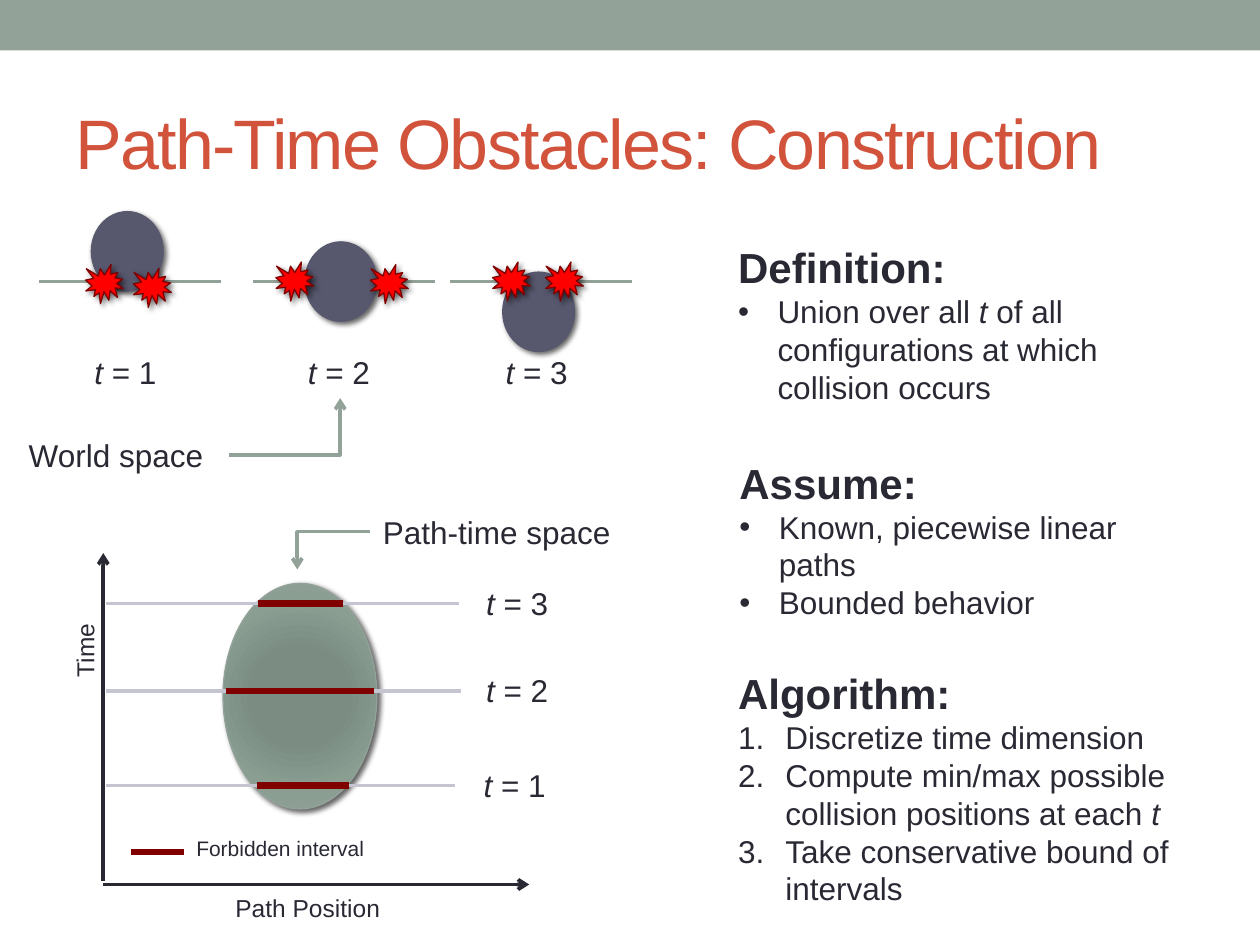
from dataclasses import dataclass

from lxml import etree
from pptx import Presentation
from pptx import util as u
from pptx.dml.color import RGBColor
from pptx.enum import shapes, text
from pptx.oxml.ns import qn


@dataclass(frozen=True)
class Theme:
    font: str = "Arial"
    ink: str = "292934"
    title: str = "D2533C"
    sage: str = "93A299"
    disk: str = "57576E"
    pale: str = "C5C5D1"
    burst: str = "FF0000"
    dark: str = "800000"
    glow: tuple = ((0, "7B8E82"), (34, "7B8D83"), (70, "8A9E92"), (100, "93A299"))
    big: int = 40
    head: int = 24
    body: int = 18
    axis: int = 14
    key: int = 12
    thin: float = 0.75
    mid: float = 2.08
    thick: float = 3.58


T = Theme()
COLS, ROWS = 100, 75  # square grid cells over the slide
CELL = u.Inches(10) // COLS


def cells(*vals):
    return [round(v * CELL) for v in vals]


def rgb(code):
    return RGBColor.from_string(code)


def sub(node, tag, **attrs):
    return etree.SubElement(node, qn(tag), {k: str(v) for k, v in attrs.items()})


# Text
def write(par, size, *runs, color=T.ink, bold=False):
    """Each run is a string, or a one-item tuple for italics."""
    for item in runs:
        run = par.add_run()
        slant = isinstance(item, tuple)
        run.text = item[0] if slant else item
        font = run.font
        font.name, font.size = T.font, u.Pt(size)
        font.bold, font.italic = bold, slant
        font.color.rgb = rgb(color)


def box(page, x, y, w, h):
    shape = page.shapes.add_textbox(*cells(x, y, w, h))
    shape.text_frame.word_wrap = True
    return shape


def label(page, at, size, *runs):
    shape = box(page, *at)
    write(shape.text_frame.paragraphs[0], size, *runs)
    return shape


def moment(page, x, y, num):
    label(page, (x, y, 7.2, 4), T.body, ("t",), f" = {num}")


def notes(page, at, head, items, numbered=False):
    frame = box(page, *at).text_frame
    write(frame.paragraphs[0], T.head, head, bold=True)
    hang = cells(3.75 if numbered else 3.13)[0]
    for runs in items:
        par = frame.add_paragraph()
        write(par, T.body, *runs)
        props = par._p.get_or_add_pPr()
        props.set("marL", str(hang))
        props.set("indent", str(-hang))
        if numbered:
            sub(props, "a:buFont", typeface="+mj-lt")
            sub(props, "a:buAutoNum", type="arabicPeriod")
        else:
            sub(props, "a:buFont", typeface=T.font)
            sub(props, "a:buChar", char="•")


# Shapes
def solid(page, kind, at, fill, edge=None, shade=True):
    shape = page.shapes.add_shape(kind, *cells(*at))
    shape.fill.solid()
    shape.fill.fore_color.rgb = rgb(fill)
    if edge:
        shape.line.color.rgb = rgb(edge)
        shape.line.width = u.Pt(T.thin)
    else:
        shape.line.fill.background()
    shape.shadow.inherit = False
    if shade:
        cast = sub(shape._element.spPr.find(qn("a:effectLst")), "a:outerShdw",
                   blurRad=u.Pt(3), dist=u.Pt(2), dir=45 * 60000,
                   algn="tl", rotWithShape=0)
        sub(sub(cast, "a:srgbClr", val="000000"), "a:alpha", val=60000)
    return shape


def radial(shape, stops):
    props = shape._element.spPr
    grad = etree.Element(qn("a:gradFill"), rotWithShape="1")
    row = sub(grad, "a:gsLst")
    for pos, code in stops:
        sub(sub(row, "a:gs", pos=pos * 1000), "a:srgbClr", val=code)
    sub(sub(grad, "a:path", path="circle"), "a:fillToRect",
        l=100000, t=100000, r=100000, b=100000)
    props.replace(props.find(qn("a:solidFill")), grad)


# Lines
def line(page, x1, y1, x2, y2, color, width=T.mid, arrow=False, bent=False):
    kind = shapes.MSO_CONNECTOR.ELBOW if bent else shapes.MSO_CONNECTOR.STRAIGHT
    con = page.shapes.add_connector(kind, *cells(x1, y1, x2, y2))
    con.line.color.rgb = rgb(color)
    con.line.width = u.Pt(width)
    props = con._element.spPr
    if bent:  # a single corner: across, then up or down
        props.find(qn("a:prstGeom")).set("prst", "bentConnector2")
    if arrow:
        sub(props.find(qn("a:ln")), "a:tailEnd", type="arrow")
    sub(props, "a:effectLst")


def world(page):
    oval, seal = shapes.MSO_SHAPE.OVAL, shapes.MSO_SHAPE.EXPLOSION1
    scenes = [(3.1, [(6.8, 21), (10.6, 21.3)]),
              (20.05, [(21.9, 20.8), (29.4, 21)]),
              (35.75, [(39.1, 20.8), (43.3, 20.8)])]
    for i, (x, hits) in enumerate(scenes):
        line(page, x, 22.35, x + 14.45, 22.35, T.sage)
        solid(page, oval, (x + 4.15, 16.8 + 2.4 * i, 5.7, 6.3), T.disk, T.disk)
        for hx, hy in hits:
            solid(page, seal, (hx, hy, 3, 3.1), T.burst, T.dark)
        moment(page, x + 3.4, 27.5, i + 1)
    label(page, (1.3, 34.1, 17, 4), T.body, "World space")
    line(page, 18.2, 36.1, 27, 31.6, T.sage, arrow=True, bent=True)


def chart(page):
    # Axes
    line(page, 8.2, 70.2, 42, 70.2, T.ink, arrow=True)
    line(page, 8.2, 69.9, 8.2, 43.9, T.ink, arrow=True)
    label(page, (17.7, 70.4, 14.3, 3.4), T.axis, "Path Position")
    label(page, (3, 49.3, 7.5, 3.4), T.axis, "Time").rotation = 270

    # Obstacle and its time slices
    blob = solid(page, shapes.MSO_SHAPE.OVAL, (17.7, 46.3, 12.2, 17.9), T.sage, T.sage)
    radial(blob, T.glow)
    slices = [(3, 47.9, 36.4, 20.5, 27.2, 37.6),
              (2, 54.85, 36.6, 17.9, 29.7, 37.6),
              (1, 62.35, 36.1, 20.4, 27.7, 37.4)]
    for num, y, end, low, high, x in slices:
        line(page, 8.4, y, end, y, T.pale)
        line(page, low, y, high, y, T.dark, T.thick)
        moment(page, x, y - 2.05, num)

    # Key and caption
    line(page, 10.4, 67.6, 14.6, 67.6, T.dark, T.thick)
    label(page, (14.6, 65.8, 16.4, 3), T.key, "Forbidden interval")
    label(page, (29.4, 40.2, 22.1, 4), T.body, "Path-time space")
    line(page, 29.4, 42.2, 23.6, 45.2, T.sage, arrow=True, bent=True)


def main():
    deck = Presentation()
    deck.slide_width, deck.slide_height = cells(COLS, ROWS)
    page = deck.slides.add_slide(deck.slide_layouts[6])

    # Band and title
    solid(page, shapes.MSO_SHAPE.RECTANGLE, (0, 0, COLS, 4), T.sage, shade=False)
    frame = box(page, 5, 5.8, 90, 10.8).text_frame
    frame.vertical_anchor = text.MSO_ANCHOR.MIDDLE
    write(frame.paragraphs[0], T.big, "Path-Time Obstacles: Construction", color=T.title)
    frame.paragraphs[0].runs[0]._r.get_or_add_rPr().set("spc", "-100")

    world(page)
    chart(page)

    # Right column
    notes(page, (57.6, 18.7, 35, 14.1), "Definition:", [
        ["Union over all ", ("t",), " of all configurations at which collision occurs"]])
    notes(page, (57.7, 35.8, 35, 14.1), "Assume:", [
        ["Known, piecewise linear paths"], ["Bounded behavior"]])
    notes(page, (57.6, 52.5, 41.1, 20.2), "Algorithm:", [
        ["Discretize time dimension"],
        ["Compute min/max possible collision positions at each ", ("t",)],
        ["Take conservative bound of intervals"]], numbered=True)

    deck.save("out.pptx")


if __name__ == "__main__":
    main()
